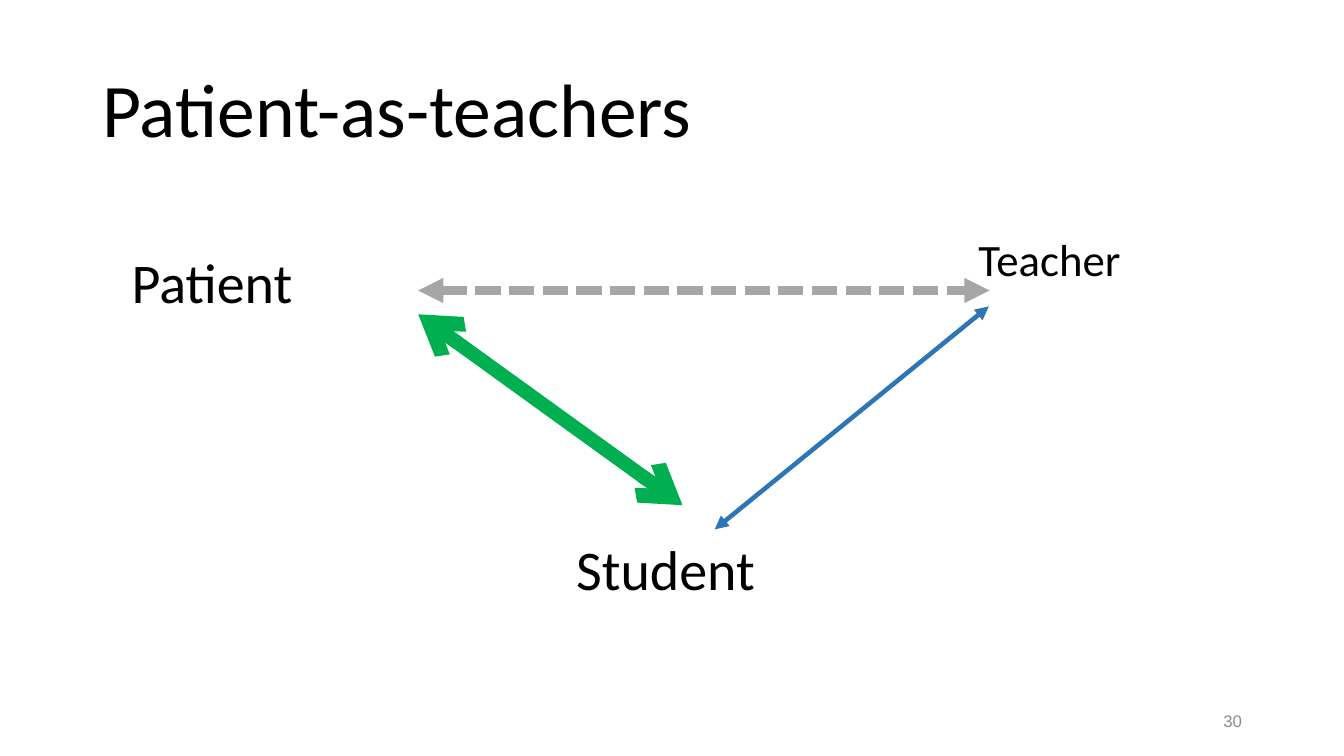
import pptx
import pptx.dml.color
import pptx.enum.dml
import pptx.enum.shapes
import pptx.enum.text
import pptx.oxml.ns
import pptx.util
from lxml import etree

Cm, Pt = pptx.util.Cm, pptx.util.Pt
Align = pptx.enum.text.PP_ALIGN
Anchor = pptx.enum.text.MSO_ANCHOR
Dash = pptx.enum.dml.MSO_LINE
qn = pptx.oxml.ns.qn

COLORS = {"text": "000000", "page": "8C8C8C", "blue": "2E75B6",
          "gray": "A6A6A6", "green": "00B050"}


def rgb(name):
    return pptx.dml.color.RGBColor.from_string(COLORS[name])


def write(shape, text, size, color="text", face="Calibri",
          align=Align.LEFT, anchor=Anchor.TOP):
    frame = shape.text_frame
    frame.text = text
    frame.word_wrap = True
    frame.vertical_anchor = anchor
    para = frame.paragraphs[0]
    para.alignment = align
    para.font.size = Pt(size)
    para.font.name = face
    para.font.color.rgb = rgb(color)
    return para


deck = pptx.Presentation()
deck.slide_width, deck.slide_height = Cm(33.87), Cm(19.05)
slide = deck.slides.add_slide(deck.slide_layouts[5])
shapes = slide.shapes

# Title
title = shapes.title
title.left, title.top = Cm(2.33), Cm(1.01)
title.width, title.height = Cm(29.21), Cm(3.68)
para = write(title, "Patient-as-teachers", 54, anchor=Anchor.MIDDLE)
para.line_spacing = 0.9

# Arrows between the three roles
arrows = [
    ((24.92, 7.72), (18.01, 13.34), "blue", 3.25, Dash.SOLID, "triangle"),
    ((10.54, 7.32), (24.94, 7.32), "gray", 6, Dash.SQUARE_DOT, "triangle"),
    ((17.2, 12.73), (10.54, 7.92), "green", 10, Dash.SOLID, "arrow"),
]
for start, end, color, width, dash, tip in arrows:
    arrow = shapes.add_connector(pptx.enum.shapes.MSO_CONNECTOR.STRAIGHT,
                                 *map(Cm, start + end))
    arrow.line.color.rgb = rgb(color)
    arrow.line.width = Pt(width)
    arrow.line.dash_style = dash
    props = arrow.line._get_or_add_ln()
    for side in ("a:headEnd", "a:tailEnd"):
        etree.SubElement(props, qn(side), type=tip)
    etree.SubElement(props.getparent(), qn("a:effectLst"))

# Roles
roles = [("Teacher", 24.41, 5.72, 1.6, 32),
         ("Patient", 3.07, 6.12, 1.96, 40),
         ("Student", 14.27, 13.34, 1.96, 40)]
for role, left, top, height, size in roles:
    box = shapes.add_textbox(Cm(left), Cm(top), Cm(7.21), Cm(height))
    write(box, role, size)

# Page number
page = shapes.add_textbox(Cm(23.93), Cm(17.65), Cm(7.62), Cm(1.02))
write(page, "30", 12, "page", "Arial", Align.RIGHT, Anchor.MIDDLE)

deck.save("out.pptx")
